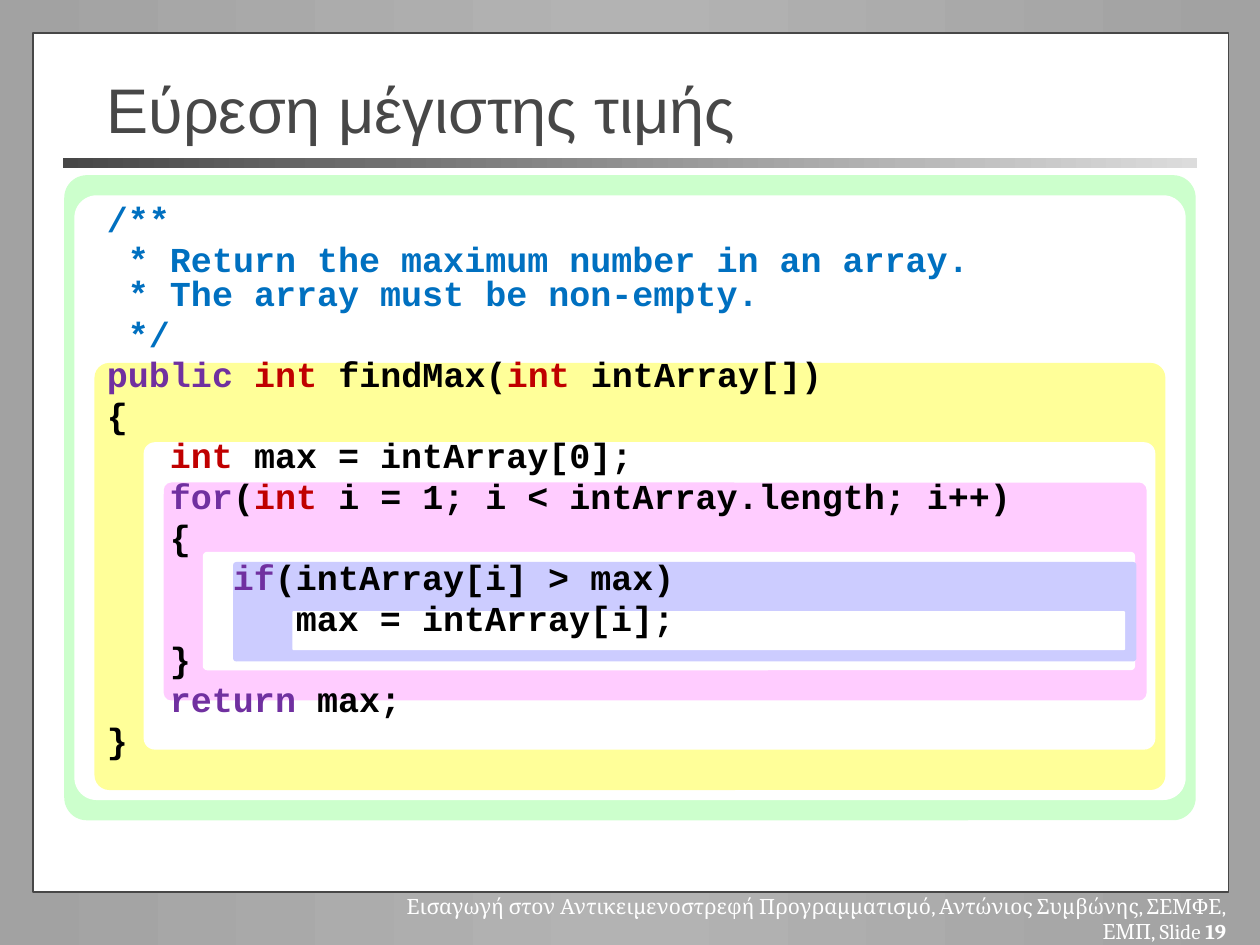
from copy import deepcopy
from dataclasses import dataclass

import lxml.etree
import pptx
import pptx.dml.color
import pptx.enum.shapes
import pptx.enum.text
import pptx.oxml.ns
import pptx.util

COLUMNS, ROWS = 100, 75
COLORS = {
    "edge": "A2A2A2", "middle": "B3B3B3", "dark": "474747", "light": "DCDCDC",
    "white": "FFFFFF", "green": "CCFFCC", "yellow": "FFFF99", "pink": "FFCCFF",
    "lilac": "CCCCFF", "comment": "0070C0", "keyword": "7030A0", "type": "C00000",
    "plain": "000000",
}
ALIGN = pptx.enum.text.PP_ALIGN
ANCHOR = pptx.enum.text.MSO_ANCHOR
SHAPES = pptx.enum.shapes.MSO_SHAPE
INDENT = pptx.util.Inches(0.5)

presentation = pptx.Presentation()
presentation.slide_width = pptx.util.Inches(10)
presentation.slide_height = pptx.util.Inches(7.5)
slide = presentation.slides.add_slide(presentation.slide_layouts[6])


@dataclass(frozen=True)
class Area:
    column: float
    row: float
    columns: float
    rows: float

    def box(self) -> tuple[int, int, int, int]:
        cell_width = presentation.slide_width / COLUMNS
        cell_height = presentation.slide_height / ROWS
        return (round(self.column * cell_width), round(self.row * cell_height),
                round(self.columns * cell_width), round(self.rows * cell_height))


@dataclass(frozen=True)
class Scope:
    color: str
    outer: Area
    inner: Area


@dataclass(frozen=True)
class CodeLine:
    level: int
    tokens: tuple[tuple[str, str], ...]


SCOPES = (
    Scope("green", Area(5.1, 13.9, 89.8, 51.2), Area(5.9, 15.5, 88.2, 48)),
    Scope("yellow", Area(7.5, 28.8, 85, 33.9), Area(11.4, 35.1, 80.3, 24.4)),
    Scope("pink", Area(13, 38.3, 78, 17.3), Area(16.1, 43.8, 74, 9.4)),
    Scope("lilac", Area(18.5, 44.6, 71.7, 7.9), Area(23.2, 48.5, 66.1, 3.1)),
)

CODE = (
    CodeLine(0, (("comment", "/**"),)),
    CodeLine(0, (("comment", " * Return the maximum number in an array. \v"
                             " * The array must be non-empty."),)),
    CodeLine(0, (("comment", " */"),)),
    CodeLine(0, (("keyword", "public "), ("type", "int "), ("plain", "findMax("),
                 ("type", "int "), ("plain", "intArray[])"))),
    CodeLine(0, (("plain", "{"),)),
    CodeLine(1, (("type", "int"), ("plain", " max = intArray[0];"))),
    CodeLine(1, (("keyword", "for"), ("plain", "("), ("type", "int "),
                 ("plain", "i = 1; i < intArray.length; i++)"))),
    CodeLine(1, (("plain", "{"),)),
    CodeLine(2, (("keyword", "if"), ("plain", "(intArray[i] > max)"))),
    CodeLine(3, (("plain", "max = intArray[i];"),)),
    CodeLine(1, (("plain", "}"),)),
    CodeLine(1, (("keyword", "return"), ("plain", " max;"))),
    CodeLine(0, (("plain", "}"),)),
)


def rgb(name: str) -> pptx.dml.color.RGBColor:
    return pptx.dml.color.RGBColor.from_string(COLORS[name])


def fill_gradient(fill, names: tuple[str, ...]) -> None:
    fill.gradient()
    fill.gradient_angle = 0
    stop_list = fill.gradient_stops[0]._gs.getparent()
    for _ in names[2:]:
        stop_list.append(deepcopy(stop_list[-1]))
    for index, (stop, name) in enumerate(zip(fill.gradient_stops, names)):
        stop.position = index / (len(names) - 1)
        stop.color.rgb = rgb(name)


def draw_box(area: Area, colors: tuple[str, ...], *, rounding: float = 0, line: str = "") -> None:
    kind = SHAPES.ROUNDED_RECTANGLE if rounding else SHAPES.RECTANGLE
    shape = slide.shapes.add_shape(kind, *area.box())
    shape.shadow.inherit = False
    if rounding:
        shape.adjustments[0] = rounding
    if len(colors) > 1:
        fill_gradient(shape.fill, colors)
    else:
        shape.fill.solid()
        shape.fill.fore_color.rgb = rgb(colors[0])
    if line:
        shape.line.color.rgb = rgb(line)
        shape.line.width = pptx.util.Pt(1)
    else:
        shape.line.fill.background()


def add_frame(area: Area, anchor=ANCHOR.TOP):
    frame = slide.shapes.add_textbox(*area.box()).text_frame
    frame.word_wrap = True
    frame.vertical_anchor = anchor
    return frame


def write(paragraph, text: str, *, font: str, size: float, color: str, bold: bool = False) -> None:
    for index, piece in enumerate(text.split("\v")):
        if index:
            paragraph.add_line_break()
        run = paragraph.add_run()
        run.text = piece
        run.font.name = font
        run.font.size = pptx.util.Pt(size)
        run.font.bold = bold
        run.font.color.rgb = rgb(color)


def space_code(paragraph, level: int) -> None:
    paragraph.line_spacing = 0.8
    paragraph.space_before = pptx.util.Pt(4)
    properties = paragraph._p.get_or_add_pPr()
    properties.set("marL", str(level * INDENT))
    spacing = properties.find(pptx.oxml.ns.qn("a:spcBef"))
    spacing.remove(spacing[0])
    lxml.etree.SubElement(spacing, pptx.oxml.ns.qn("a:spcPct")).set("val", "20000")


def draw_code(area: Area, lines: tuple[CodeLine, ...]) -> None:
    frame = add_frame(area)
    for index, line in enumerate(lines):
        paragraph = frame.add_paragraph() if index else frame.paragraphs[0]
        space_code(paragraph, line.level)
        for color, text in line.tokens:
            write(paragraph, text, font="Courier New", size=20, color=color, bold=True)


def main() -> None:
    fill_gradient(slide.background.fill, ("edge", "middle", "edge"))
    draw_box(Area(2.6, 2.6, 94.9, 68.2), ("white",), line="dark")
    draw_box(Area(5, 12.5, 90, 0.8), ("dark", "light"))

    footer = add_frame(Area(28.3, 70.4, 70, 3)).paragraphs[0]
    footer.alignment = ALIGN.RIGHT
    write(footer, "Εισαγωγή στον Αντικειμενοστρεφή Προγραμματισμό, "
                  "Αντώνιος Συμβώνης, ΣΕΜΦΕ, ΕΜΠ, Slide ",
          font="Cambria", size=12, color="white")
    write(footer, "19", font="Cambria", size=12, color="white", bold=True)

    for scope in SCOPES:
        draw_box(scope.outer, (scope.color,), rounding=0.035)
        draw_box(scope.inner, ("white",), rounding=0.037)

    title = add_frame(Area(7.5, 5.5, 85, 6.2), ANCHOR.MIDDLE).paragraphs[0]
    write(title, "Εύρεση μέγιστης τιμής", font="Arial", size=36, color="dark")
    draw_code(Area(7.5, 15.8, 84.2, 46.9), CODE)
    presentation.save("out.pptx")


if __name__ == "__main__":
    main()
